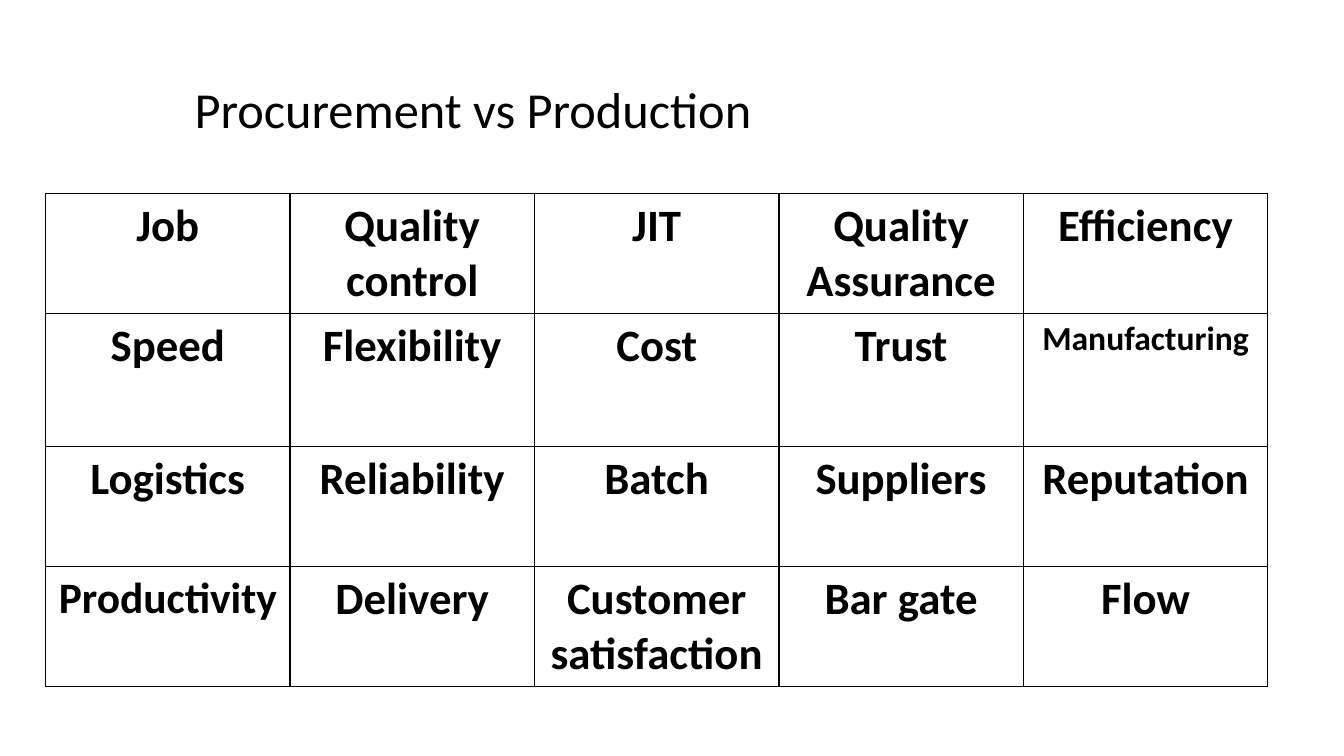
from lxml import etree
from pptx import Presentation
from pptx.dml.color import RGBColor
from pptx.enum.text import MSO_ANCHOR, PP_ALIGN
from pptx.oxml.ns import qn
from pptx.util import Cm, Pt

BLACK = RGBColor(0, 0, 0)
WHITE = RGBColor(255, 255, 255)
CENTER = PP_ALIGN.CENTER
LEFT = PP_ALIGN.LEFT
MIDDLE = MSO_ANCHOR.MIDDLE
FONT = "Calibri"

TERMS = [
    ["Job", "Quality control", "JIT", "Quality\nAssurance", "Efficiency"],
    ["Speed", "Flexibility", "Cost", "Trust", "Manufacturing"],
    ["Logistics", "Reliability", "Batch", "Suppliers", "Reputation"],
    ["Productivity", "Delivery", "Customer satisfaction", "Bar gate", "Flow"],
]
ROW_HEIGHTS = [3.02, 3.36, 3.02, 3.02]
COLUMN_WIDTH = 6.16
TERM_SIZE = 32
SPECIAL_SIZES = {"Manufacturing": 24, "Productivity": 31}


def set_font(paragraph, size, bold):
    paragraph.font.name = FONT
    paragraph.font.size = Pt(size)
    paragraph.font.bold = bold
    paragraph.font.color.rgb = BLACK


def add_borders(cell):
    properties = cell._tc.get_or_add_tcPr()
    for side in ("a:lnL", "a:lnR", "a:lnT", "a:lnB"):
        line = etree.SubElement(properties, qn(side), w=str(Pt(1)))
        fill = etree.SubElement(line, qn("a:solidFill"))
        etree.SubElement(fill, qn("a:srgbClr"), val=str(BLACK))


presentation = Presentation()
presentation.slide_width = Cm(33.87)
presentation.slide_height = Cm(19.05)
slide = presentation.slides.add_slide(presentation.slide_layouts[5])

title = slide.shapes.title
title.left, title.top, title.width, title.height = Cm(4.65), Cm(1.83), Cm(23.83), Cm(1.8)
title.text_frame.text = "Procurement vs Production"
title.text_frame.vertical_anchor = MIDDLE
title_paragraph = title.text_frame.paragraphs[0]
title_paragraph.alignment = LEFT
set_font(title_paragraph, 36, False)

table = slide.shapes.add_table(
    len(TERMS), len(TERMS[0]), Cm(1.15), Cm(4.88),
    Cm(COLUMN_WIDTH * len(TERMS[0])), Cm(sum(ROW_HEIGHTS)),
).table
table.first_row = False
table.horz_banding = False
for column in table.columns:
    column.width = Cm(COLUMN_WIDTH)

for row_index, terms in enumerate(TERMS):
    table.rows[row_index].height = Cm(ROW_HEIGHTS[row_index])
    for column_index, term in enumerate(terms):
        cell = table.cell(row_index, column_index)
        cell.text = term
        add_borders(cell)
        cell.fill.solid()
        cell.fill.fore_color.rgb = WHITE
        for paragraph in cell.text_frame.paragraphs:
            paragraph.alignment = CENTER
            set_font(paragraph, SPECIAL_SIZES.get(term, TERM_SIZE), True)

presentation.save("out.pptx")
